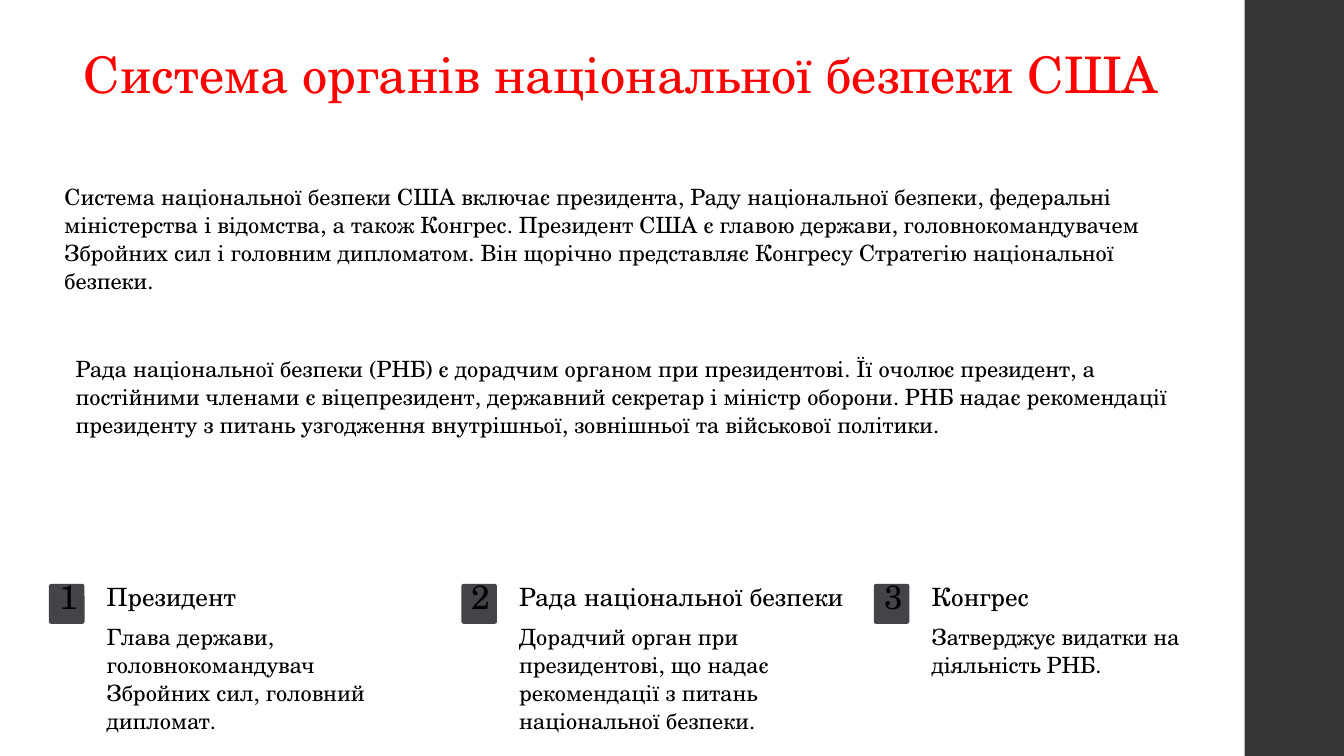
from pptx import Presentation
from pptx import util as u
from pptx.dml.color import RGBColor
from pptx.enum import shapes, text

BLACK = "000000"


def color(value):
    return RGBColor.from_string(value)


class SlideBuilder:
    font = "TeX Gyre Schola"

    def __init__(self, slide):
        self.slide = slide

    def box(self, kind, left, top, width, height, fill):
        shape = self.slide.shapes.add_shape(
            kind, u.Pt(left), u.Pt(top), u.Pt(width), u.Pt(height))
        shape.shadow.inherit = False
        shape.fill.solid()
        shape.fill.fore_color.rgb = color(fill)
        shape.line.fill.background()
        return shape

    def label(self, words, left, top, width, height, size, spacing,
              ink=BLACK, wrap=False, align=text.PP_ALIGN.LEFT):
        shape = self.slide.shapes.add_textbox(
            u.Pt(left), u.Pt(top), u.Pt(width), u.Pt(height))
        frame = shape.text_frame
        frame.margin_left = frame.margin_right = 0
        frame.margin_top = frame.margin_bottom = 0
        frame.word_wrap = wrap
        paragraph = frame.paragraphs[0]
        paragraph.text = words
        paragraph.alignment = align
        paragraph.line_spacing = u.Pt(spacing)
        paragraph.font.name = self.font
        paragraph.font.size = u.Pt(size)
        paragraph.font.color.rgb = color(ink)

    def body(self, words, left, top, width, height):
        self.label(words, left, top, width, height, 16, 20, wrap=True)

    def branch(self, number, heading, description, left, top):
        badge = self.box(shapes.MSO_SHAPE.ROUNDED_RECTANGLE,
                         left, top, 25.4, 28.6, "434348")
        badge.adjustments[0] = 0.067
        self.label(str(number), left + 4, top + 4.5, 20, 18.8, 24, 18.8,
                   align=text.PP_ALIGN.CENTER)
        self.label(heading, left + 41.2, top, 245, 20, 18, 19.6)
        self.body(description, left + 41.2, top + 27.4, 212, 61)


def main():
    presentation = Presentation()
    presentation.slide_width = u.Pt(960)
    presentation.slide_height = u.Pt(540)
    slide = presentation.slides.add_slide(presentation.slide_layouts[6])
    builder = SlideBuilder(slide)

    # Side band and title
    builder.box(shapes.MSO_SHAPE.RECTANGLE, 889, 0, 71, 540, "353537")
    builder.label("Система органів національної безпеки США",
                  44, 34.5, 800, 39.6, 36, 39.6, "FF0000",
                  align=text.PP_ALIGN.CENTER)

    # Introductory paragraphs
    builder.body(
        "Система національної безпеки США включає президента, Раду національної "
        "безпеки, федеральні міністерства і відомства, а також Конгрес. Президент "
        "США є главою держави, головнокомандувачем Збройних сил і головним "
        "дипломатом. Він щорічно представляє Конгресу Стратегію національної безпеки.",
        46, 130, 818, 80)
    builder.body(
        "Рада національної безпеки (РНБ) є дорадчим органом при президентові. "
        "Її очолює президент, а постійними членами є віцепрезидент, державний "
        "секретар і міністр оборони. РНБ надає рекомендації президенту з питань "
        "узгодження внутрішньої, зовнішньої та військової політики.",
        54, 253, 818, 61)

    # Three numbered branches
    branches = [
        ("Президент",
         "Глава держави, головнокомандувач Збройних сил, головний дипломат."),
        ("Рада національної безпеки",
         "Дорадчий орган при президентові, що надає рекомендації з питань "
         "національної безпеки."),
        ("Конгрес", "Затверджує видатки на діяльність РНБ."),
    ]
    for index, (heading, description) in enumerate(branches):
        builder.branch(index + 1, heading, description, 35 + index * 294.6, 417)

    presentation.save("out.pptx")


if __name__ == "__main__":
    main()
